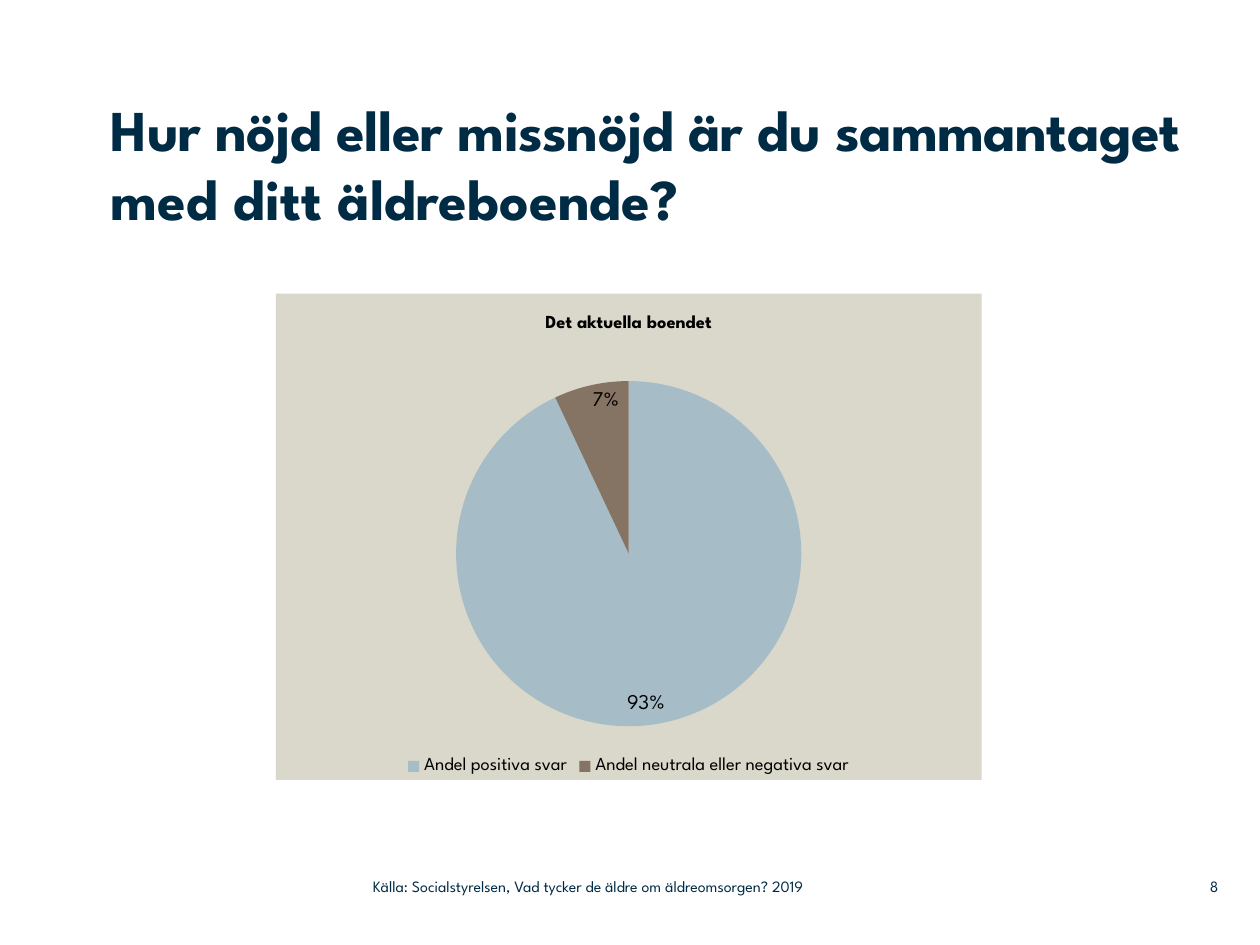
from dataclasses import dataclass

from lxml import etree
from pptx import Presentation
from pptx.chart.data import CategoryChartData
from pptx.dml.color import RGBColor
from pptx.enum.chart import XL_CHART_TYPE as ChartType
from pptx.enum.chart import XL_LABEL_POSITION as LabelPosition
from pptx.enum.chart import XL_LEGEND_POSITION as LegendPosition
from pptx.enum.text import MSO_ANCHOR as Anchor
from pptx.enum.text import PP_ALIGN as Align
from pptx.oxml import parse_xml
from pptx.oxml.ns import qn
from pptx.util import Inches, Pt

CHART_NS = "http://schemas.openxmlformats.org/drawingml/2006/chart"


@dataclass(frozen=True)
class Theme:
    font: str = "League Spartan"
    navy: str = "002B45"
    black: str = "000000"
    sand: str = "DAD7CB"
    slices: tuple = ("A6BCC6", "857363")
    title_size: float = 33
    title_pitch: float = 39.4
    caption_size: float = 10.5
    label_size: float = 12
    footer_size: float = 9


class PageBuilder:
    def __init__(self, page, theme):
        self.page = page
        self.theme = theme

    def style(self, font, size, color, bold=False):
        font.name = self.theme.font
        font.size = Pt(size)
        font.bold = bold
        font.color.rgb = RGBColor.from_string(color)

    def text(self, spans, left, top, width, height, size,
             bold=False, align=Align.LEFT, anchor=Anchor.MIDDLE):
        box = self.page.shapes.add_textbox(
            Inches(left), Inches(top), Inches(width), Inches(height))
        frame = box.text_frame
        frame.margin_left = frame.margin_right = 0
        frame.margin_top = frame.margin_bottom = 0
        frame.word_wrap = True
        frame.vertical_anchor = anchor
        para = frame.paragraphs[0]
        para.alignment = align
        for words in spans:
            span = para.add_run()
            span.text = words
            self.style(span.font, size, self.theme.navy, bold)
        return para

    def title(self, spans, left, top, width, height):
        """Write the title with its first span set slightly tighter."""
        para = self.text(spans, left, top, width, height,
                         self.theme.title_size, bold=True, anchor=Anchor.TOP)
        para.line_spacing = Pt(self.theme.title_pitch)
        para.runs[0].font._element.set("spc", "-30")

    def pie(self, heading, shares, left, top, width, height, plot):
        theme = self.theme
        data = CategoryChartData()
        data.categories = list(shares)
        data.add_series("Series 1", list(shares.values()))
        chart = self.page.shapes.add_chart(
            ChartType.PIE, Inches(left), Inches(top),
            Inches(width), Inches(height), data).chart
        self.style(chart.font, 18, theme.black)

        chart.has_title = True
        chart.chart_title.include_in_layout = False
        frame = chart.chart_title.text_frame
        frame.text = heading
        self.style(frame.paragraphs[0].runs[0].font,
                   theme.caption_size, theme.black, bold=True)

        chart.has_legend = True
        chart.legend.position = LegendPosition.BOTTOM
        chart.legend.include_in_layout = False
        self.style(chart.legend.font, theme.caption_size, theme.black)

        pie = chart.plots[0]
        pie.vary_by_categories = True
        for index, color in enumerate(theme.slices):
            fill = pie.series[0].points[index].format.fill
            fill.solid()
            fill.fore_color.rgb = RGBColor.from_string(color)

        labels = pie.series[0].data_labels
        labels.show_value = False
        labels.show_percentage = True
        labels.number_format = "0%"
        labels.number_format_is_linked = False
        labels.position = LabelPosition.INSIDE_END
        self.style(labels.font, theme.label_size, theme.black)

        self.place_plot(chart, plot)
        self.fill_chart(chart, theme.sand)

    def place_plot(self, chart, plot):
        """Set the plot's x, y, w and h as fractions of the chart."""
        area = chart._chartSpace.chart.plotArea
        for old in area.findall(qn("c:layout")):
            area.remove(old)
        layout = parse_xml(f'<c:layout xmlns:c="{CHART_NS}"/>')
        manual = etree.SubElement(layout, qn("c:manualLayout"))
        settings = {"layoutTarget": "inner", "xMode": "edge", "yMode": "edge",
                    **dict(zip("xywh", plot))}
        for name, value in settings.items():
            etree.SubElement(manual, qn(f"c:{name}")).set("val", str(value))
        area.insert(0, layout)

    def fill_chart(self, chart, color):
        chart._chartSpace.chart.addnext(parse_xml(
            f'<c:spPr xmlns:c="{CHART_NS}" '
            'xmlns:a="http://schemas.openxmlformats.org/drawingml/2006/main">'
            f'<a:solidFill><a:srgbClr val="{color}"/></a:solidFill>'
            '<a:ln><a:noFill/></a:ln></c:spPr>'))


def main():
    deck = Presentation()
    deck.slide_width, deck.slide_height = Inches(10), Inches(7.5)
    theme = Theme()
    builder = PageBuilder(deck.slides.add_slide(deck.slide_layouts[6]), theme)

    builder.text(["8"], 9.2, 6.89, 0.47, 0.29, theme.footer_size,
                 align=Align.RIGHT)
    builder.text(
        ["Källa: Socialstyrelsen, Vad tycker de äldre om äldreomsorgen? 2019"],
        2.96, 6.89, 4.43, 0.29, theme.footer_size)
    builder.title(
        ["Hur nöjd eller missnöjd är du sammantaget ",
         "med ditt äldreboende?"],
        0.88, 0.75, 8.83, 1.42)
    builder.pie(
        "Det aktuella boendet",
        {"Andel positiva svar": 93, "Andel neutrala eller negativa svar": 7},
        2.19, 2.33, 5.6, 3.86, plot=(0.25, 0.18, 0.5, 0.71))
    deck.save("out.pptx")


if __name__ == "__main__":
    main()
